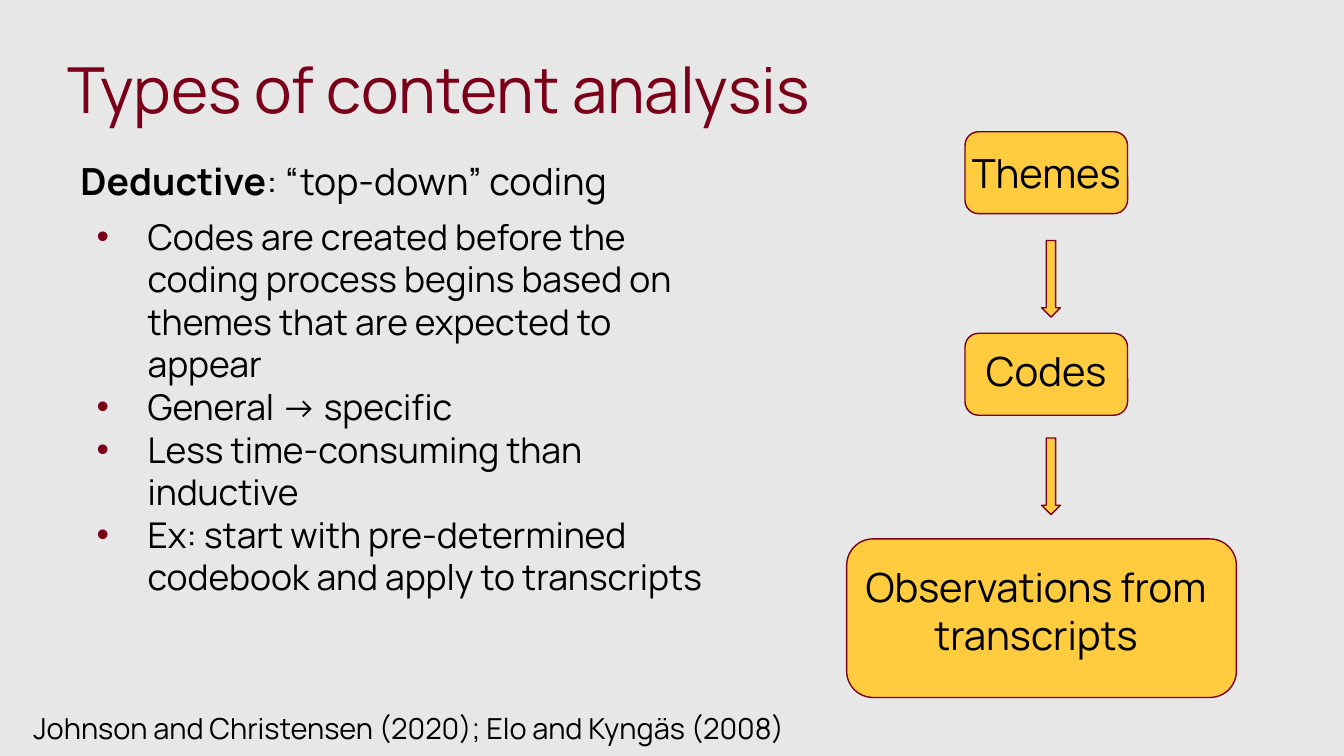
from lxml.etree import SubElement
from pptx import Presentation
from pptx.dml.color import RGBColor
from pptx.enum.shapes import MSO_SHAPE
from pptx.enum.text import MSO_ANCHOR, MSO_AUTO_SIZE, PP_ALIGN
from pptx.oxml.ns import qn
from pptx.util import Inches, Pt

COLORS = {"background": "E6E7E6", "maroon": "7A0019", "gold": "FFCC3F", "text": "000000"}
FONT = "Manrope"


def rgb(name):
    return RGBColor.from_string(COLORS[name])


def write(shape, paragraphs, size, color="text", align=PP_ALIGN.LEFT,
          anchor=MSO_ANCHOR.TOP, insets=(0.1, 0.1, 0.1, 0.1), bullet=None):
    """Fill a shape with paragraphs, each a list of (text, bold) runs."""
    frame = shape.text_frame
    frame.word_wrap = True
    frame.auto_size = MSO_AUTO_SIZE.NONE
    frame.vertical_anchor = anchor
    frame.margin_left, frame.margin_top, frame.margin_right, frame.margin_bottom = map(Inches, insets)
    for index, runs in enumerate(paragraphs):
        paragraph = frame.add_paragraph() if index else frame.paragraphs[0]
        paragraph.alignment = align
        for text, bold in runs:
            run = paragraph.add_run()
            run.text = text
            run.font.name = FONT
            run.font.size = Pt(size)
            run.font.bold = bold
            run.font.color.rgb = rgb(color)
        if bullet:
            props = paragraph._p.get_or_add_pPr()
            props.set("marL", str(Inches(0.5)))
            props.set("indent", str(Inches(-0.38)))
            SubElement(SubElement(props, qn("a:buClr")), qn("a:srgbClr"), val=COLORS["maroon"])
            SubElement(props, qn("a:buFont"), typeface="Arial")
            SubElement(props, qn("a:buChar"), char=bullet)


# Widescreen slide, 16:9
presentation = Presentation()
presentation.slide_width = Inches(10)
presentation.slide_height = Inches(10) * 9 // 16
slide = presentation.slides.add_slide(presentation.slide_layouts[5])
slide.background.fill.solid()
slide.background.fill.fore_color.rgb = rgb("background")

# Title
title = slide.shapes.title
title.left, title.top, title.width, title.height = map(Inches, (0.5, 0.37, 9, 0.57))
write(title, [[("Types of content analysis", False)]], 34, color="maroon", insets=(0, 0, 0, 0))

# Definition and its points
definition = slide.shapes.add_textbox(Inches(0.5), Inches(1.13), Inches(4.88), Inches(0.46))
write(definition, [[("Deductive", True), (": “top-down” coding", False)]], 20,
      insets=(0.1, 0.05, 0.1, 0.05))

POINTS = [
    "Codes are created before the coding process begins based on themes that are expected to appear",
    "General → specific",
    "Less time-consuming than inductive",
    "Ex: start with pre-determined codebook and apply to transcripts",
]
points = slide.shapes.add_textbox(Inches(0.5), Inches(1.55), Inches(4.88), Inches(3.5))
write(points, [[(point, False)] for point in POINTS], 19,
      insets=(0.1, 0.05, 0.1, 0.05), bullet="•")

# Top-down flow: stages, with text insets that seat each label
STAGES = [
    ("Themes", (7.18, 0.98, 1.21, 0.61), (0, 0, 0, 0)),
    ("Codes", (7.18, 2.48, 1.21, 0.61), (0, 0, 0, 0.05)),
    ("Observations from transcripts", (6.3, 4.01, 2.9, 1.18), (0, 0, 0.08, 0.12)),
]
flow = []
for label, box, insets in STAGES:
    stage = slide.shapes.add_shape(MSO_SHAPE.ROUNDED_RECTANGLE, *map(Inches, box))
    write(stage, [[(label, False)]], 21.5, align=PP_ALIGN.CENTER,
          anchor=MSO_ANCHOR.MIDDLE, insets=insets)
    flow.append(stage)

# Arrows between the stages
for top in (1.79, 3.26):
    flow.append(slide.shapes.add_shape(
        MSO_SHAPE.DOWN_ARROW, Inches(7.75), Inches(top), Inches(0.14), Inches(0.57)))

for part in flow:
    part.shadow.inherit = False
    part.fill.solid()
    part.fill.fore_color.rgb = rgb("gold")
    part.line.color.rgb = rgb("maroon")
    part.line.width = Pt(0.75)

# Citation
citation = slide.shapes.add_textbox(Inches(0.15), Inches(5.19), Inches(9.7), Inches(0.23))
write(citation, [[("Johnson and Christensen (2020); Elo and Kyngäs (2008)", False)]], 15.5)

presentation.save("out.pptx")
